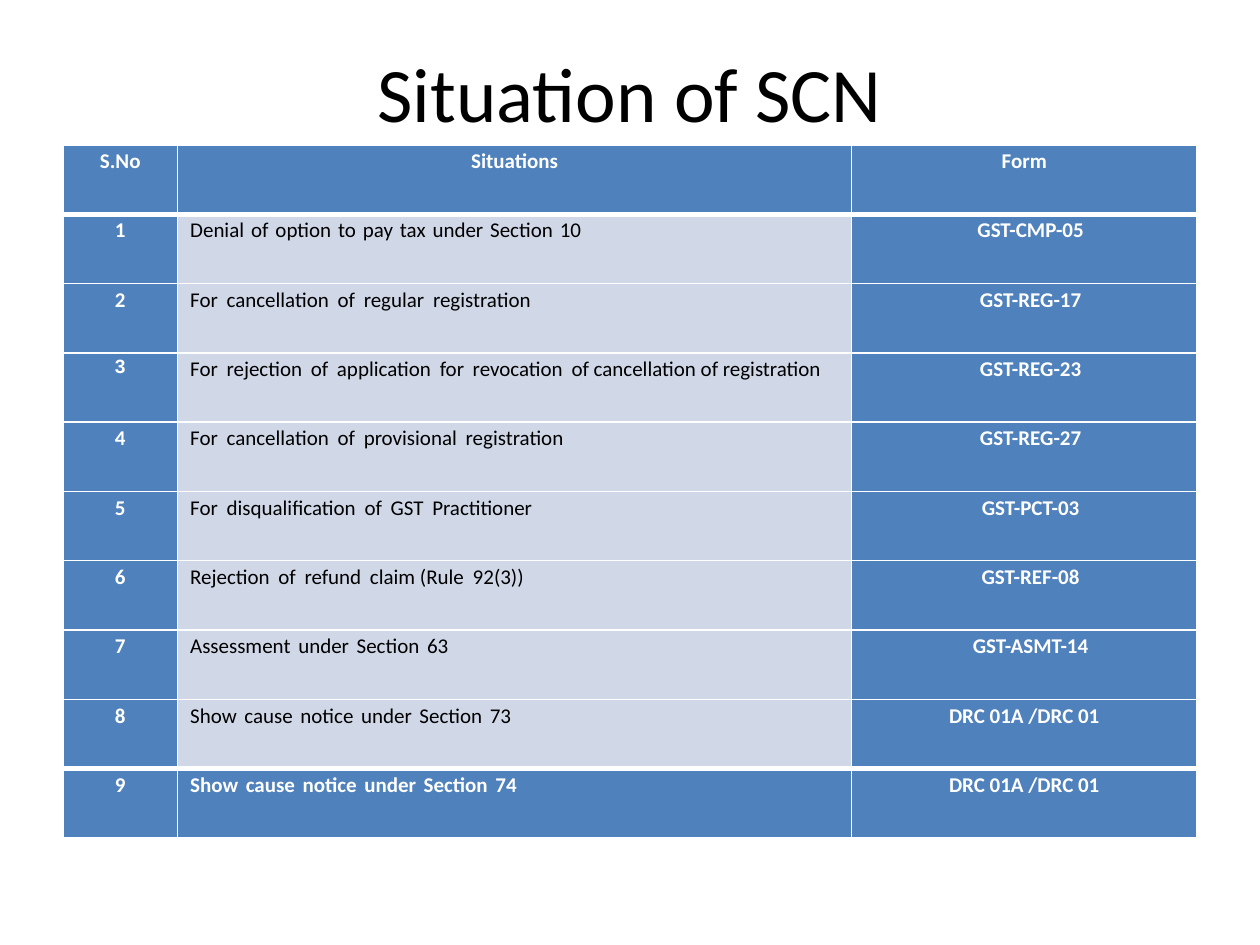
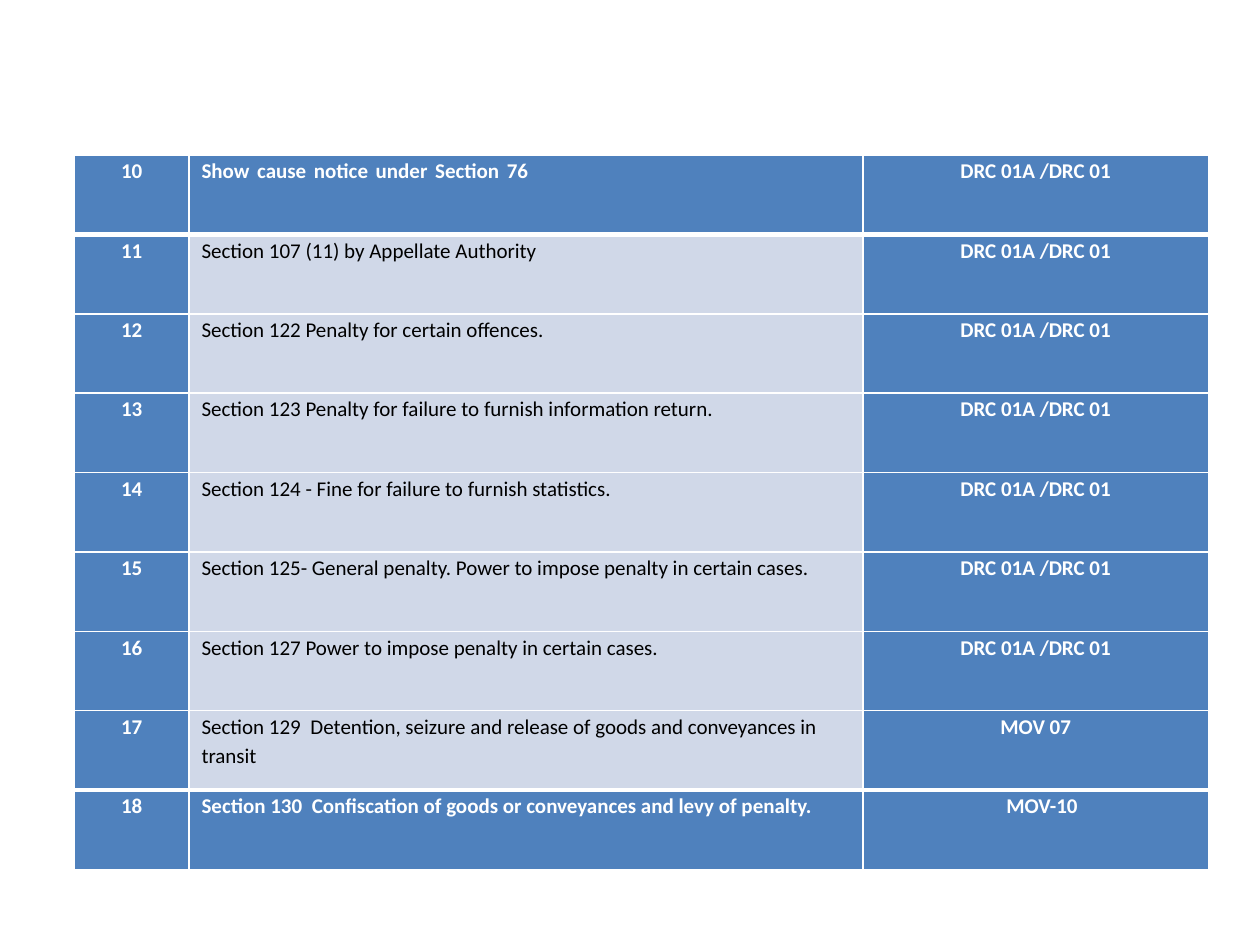
"""Build two slides listing show cause notice situations and their forms."""
import pptx
import pptx.dml.color
import pptx.enum.text
import pptx.oxml
import pptx.oxml.ns
import pptx.util

Pt = pptx.util.Pt
ALIGN = pptx.enum.text.PP_ALIGN
COLORS = {"white": "FFFFFF", "black": "000000", "blue": "4F81BD", "pale": "D0D8E8"}
COLUMNS = (65.5, 385.2, 197.3)
DRC = "DRC 01A /DRC 01"
HEADER = ("S.No", "Situations", "Form")
WIDE_SPACE = "_"

SITUATIONS = [
    ("Denial_of_option_to_pay_tax_under_Section_10", "GST-CMP-05", 1.2),
    ("For_cancellation_of_regular_registration", "GST-REG-17", 2.2),
    ("For_rejection_of_application_for_revocation_of cancellation of registration",
     "GST-REG-23", 2.2),
    ("For_cancellation_of_provisional_registration", "GST-REG-27", 2.2),
    ("For_disqualification_of_GST_Practitioner", "GST-PCT-03", 2.2),
    ("Rejection_of_refund_claim (Rule_92(3))", "GST-REF-08", 2.2),
    ("Assessment_under_Section_63", "GST-ASMT-14", 1.6),
    ("Show_cause_notice_under_Section_73", DRC, 1.6),
    ("Show_cause_notice_under_Section_74", DRC, 1.6),
    ("Show_cause_notice_under_Section_76", DRC, 1.6),
    ("Section 107 (11) by Appellate Authority", DRC, 0),
    ("Section 122 Penalty for certain offences.", DRC, 0),
    ("Section 123 Penalty for failure to furnish information return.", DRC, 0),
    ("Section 124 - Fine for failure to furnish statistics.", DRC, 0),
    ("Section 125- General penalty. Power to impose penalty in certain cases.", DRC, 0),
    ("Section 127 Power to impose penalty in certain cases.", DRC, 0),
    ("Section 129_Detention, seizure and release of goods and conveyances in transit",
     "MOV 07", 2.7),
    ("Section 130_Confiscation of goods or conveyances and levy of penalty.", "MOV-10", 2.7),
]


class Deck:
    def __init__(self):
        self.prs = pptx.Presentation()
        self.prs.slide_width, self.prs.slide_height = Pt(720), Pt(540)
        self.s = None

    def slide(self):
        self.s = self.prs.slides.add_slide(self.prs.slide_layouts[6])

    def color(self, name):
        return pptx.dml.color.RGBColor.from_string(COLORS[name])

    def font(self, r, size, color, bold=False, name="Calibri"):
        r.font.name, r.font.size, r.font.bold = name, Pt(size), bold
        r.font.color.rgb = self.color(color)

    def title(self, text):
        tf = self.s.shapes.add_textbox(Pt(36), Pt(21.6), Pt(648), Pt(61.2)).text_frame
        tf.word_wrap = True
        tf.vertical_anchor = pptx.enum.text.MSO_ANCHOR.MIDDLE
        tf.text = text
        p = tf.paragraphs[0]
        p.alignment = ALIGN.CENTER
        self.font(p.runs[0], 44, "black")

    def borders(self, cell, top, bottom):
        tcPr = cell._tc.get_or_add_tcPr()
        for side, width in (("L", 1), ("R", 1), ("T", top), ("B", bottom)):
            tcPr.append(pptx.oxml.parse_xml(
                f'<a:ln{side} {pptx.oxml.ns.nsdecls("a")} w="{Pt(width)}"><a:solidFill>'
                f'<a:srgbClr val="{COLORS["white"]}"/></a:solidFill></a:ln{side}>'))

    def cell(self, cell, text, top, bottom, pale=False, left=False, indent=0, gap=0):
        self.borders(cell, top, bottom)
        cell.fill.solid()
        cell.fill.fore_color.rgb = self.color("pale" if pale else "blue")
        cell.margin_left = cell.margin_right = cell.margin_top = cell.margin_bottom = 0
        p = cell.text_frame.paragraphs[0]
        p.alignment = ALIGN.LEFT if left else ALIGN.CENTER
        p.line_spacing, p.space_before = 1.15, Pt(6)
        p._p.get_or_add_pPr().set("marL", str(Pt(indent)))
        for i, words in enumerate(text.split(WIDE_SPACE)):
            if i:
                space = p.add_run()
                space.text = " "
                space._r.get_or_add_rPr().set("spc", str(round(gap * 100)))
            p.add_run().text = words
        for r in p.runs:
            self.font(r, 12, "black" if pale else "white", not pale)

    def table(self, x, y, row_height, first, situations, header=None):
        count = len(situations) + bool(header)
        tbl = self.s.shapes.add_table(
            count, 3, Pt(x), Pt(y), Pt(sum(COLUMNS)), Pt(row_height * count)).table
        tbl.first_row = tbl.horz_banding = False
        for column, width in zip(tbl.columns, COLUMNS):
            column.width = Pt(width)
        for row in tbl.rows:
            row.height = Pt(row_height)
        rules = [1, 3] + [1] * (count - 3) + [3, 1]
        if header:
            for j, text in enumerate(header):
                self.cell(tbl.cell(0, j), text, rules[0], rules[1])
        for i, (situation, form, gap) in enumerate(situations, bool(header)):
            edges = rules[i], rules[i + 1]
            number = first + i - bool(header)
            self.cell(tbl.cell(i, 0), str(number), *edges)
            self.cell(tbl.cell(i, 1), situation, *edges, pale=0 < i < count - 1,
                      left=True, indent=7.2, gap=gap)
            self.cell(tbl.cell(i, 2), form, *edges,
                      indent=7.2 if "-" in form else 0)
        return tbl


def main():
    deck = Deck()
    deck.slide()
    deck.title("Situation of SCN")
    tbl = deck.table(36, 82.8, 39.6, 1, SITUATIONS[:9], HEADER)
    deck.font(tbl.cell(3, 0).text_frame.paragraphs[0].runs[0], 11, "white", True, "Arial")
    deck.slide()
    deck.table(42.5, 88.6, 45.36, 10, SITUATIONS[9:])
    deck.prs.save("out.pptx")


if __name__ == "__main__":
    main()
